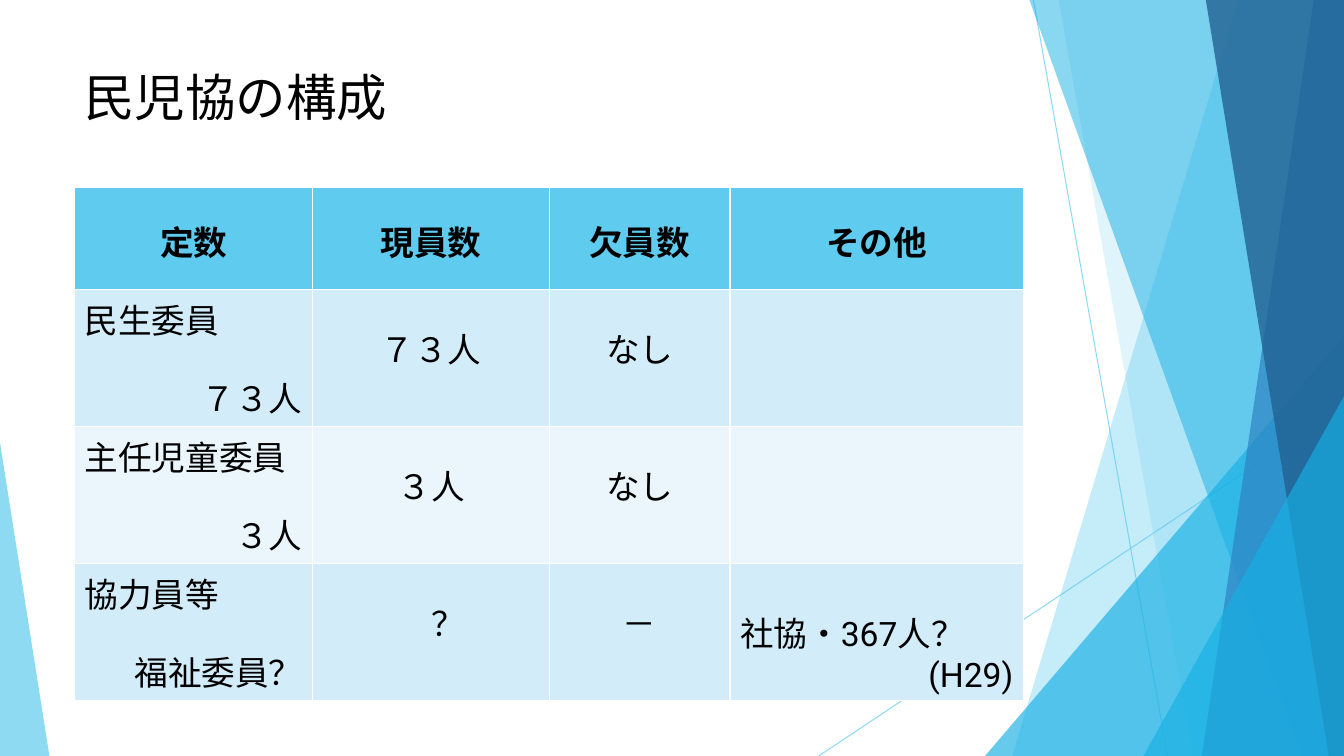
from lxml import etree
from pptx import Presentation
from pptx.dml.color import RGBColor
from pptx.enum.shapes import MSO_CONNECTOR, MSO_SHAPE
from pptx.enum.text import PP_ALIGN
from pptx.oxml.ns import qn
from pptx.util import Inches, Pt

LINE = MSO_CONNECTOR.STRAIGHT
WEDGE = MSO_SHAPE.ISOSCELES_TRIANGLE
LEFT, MID, RIGHT = PP_ALIGN.LEFT, PP_ALIGN.CENTER, PP_ALIGN.RIGHT
FONT = "Roboto"
WIDE, HIGH = 13.33, 7.5
SKY, CYAN, BLUE, NAVY = "5FCBEF", "17B0E4", "2E83C3", "226292"
BANDS = ["D2ECF9", "EAF6FC"]

RAYS = [((10.25, 0), (11.58, HIGH)), ((WIDE, 4.03), (8.12, HIGH))]
SHARDS = [
    (12.28, 10.04, SKY, 36),
    (10.5, 11.83, SKY, 20),
    ((9.77, 3.33, 3.56, 4.17), 1, CYAN, 66),
    (10.21, 12.91, CYAN, 50),
    (13.03, 11.92, BLUE, 70),
    (11.96, 13.18, NAVY, 80),
    ((11.34, 3.93, 1.99, 3.57), 1, CYAN, 66),
    ((0, 4.39, 0.49, 3.11), 0, SKY, 70),
]
COLS = [2.36, 2.35, 1.79, 2.91]
HEADS = ["定数", "現員数", "欠員数", "その他"]
ROWS = [
    ("民生委員", "７３人", "７３人", "なし", []),
    ("主任児童委員", "３人", "３人", "なし", []),
    ("協力員等", "福祉委員？", "？", "－",
     [("社協・367人？", LEFT), ("(H29)", RIGHT)]),
]


def rgb(code):
    """Turn a hex string into a colour."""
    return RGBColor.from_string(code)


def fade(fill, pct):
    """Make a solid fill partly clear."""
    tint = fill.find(".//" + qn("a:srgbClr"))
    etree.SubElement(tint, qn("a:alpha")).set("val", str(pct * 1000))


def paint(shape, code, pct):
    """Give a shape a clear fill and no edge."""
    shape.shadow.inherit = False
    shape.fill.solid()
    shape.fill.fore_color.rgb = rgb(code)
    shape.line.fill.background()
    fade(shape._element.spPr, pct)


def draw_ray(slide, start, end):
    """Draw one thin line."""
    ray = slide.shapes.add_connector(LINE, *map(Inches, start + end))
    ray.line.color.rgb = rgb(SKY)
    ray.line.width = Pt(0.75)
    fade(ray._element.spPr, 70)
    etree.SubElement(ray._element.spPr, qn("a:effectLst"))


def draw_wedge(slide, box, tip):
    """Draw a triangle with its tip at a share of its width."""
    wedge = slide.shapes.add_shape(WEDGE, *map(Inches, box))
    wedge.adjustments[0] = tip
    return wedge


def draw_pane(slide, top, foot):
    """Draw a pane from a slanted edge to the right of the slide."""
    pen = slide.shapes.build_freeform(Inches(top), 0, scale=1.0)
    ends = [(WIDE, 0), (WIDE, HIGH), (foot, HIGH)]
    pen.add_line_segments([(Inches(x), Inches(y)) for x, y in ends])
    return pen.convert_to_shape()


def add_decor(slide):
    """Draw the lines and clear shards around the slide."""
    for start, end in RAYS:
        draw_ray(slide, start, end)
    for top, foot, code, pct in SHARDS:
        draw = draw_wedge if isinstance(top, tuple) else draw_pane
        paint(draw(slide, top, foot), code, pct)


def write(frame, lines, size=24, bold=False, gap=0, space=1.0):
    """Write aligned lines into a text frame."""
    frame.word_wrap = True
    for i, (text, side) in enumerate(lines):
        para = frame.paragraphs[0] if i == 0 else frame.add_paragraph()
        para.text = text
        para.alignment = side
        para.line_spacing = space
        if i:
            para.space_before = Pt(gap)
        font = para.font
        font.name, font.size, font.bold = FONT, Pt(size), bold
        font.color.rgb = rgb("000000")


def add_title(slide, box):
    """Place the title."""
    frame = slide.shapes.add_textbox(*map(Inches, box)).text_frame
    write(frame, [("民児協の構成", LEFT)], size=36, space=0.9)


def fill_cell(cell, code, lines, top=0.05, **style):
    """Fill one cell and write its lines below a top margin."""
    cell.fill.solid()
    cell.fill.fore_color.rgb = rgb(code)
    cell.margin_top = Inches(top)
    write(cell.text_frame, lines, **style)


def add_grid(slide, box):
    """Place the table of members."""
    frame = slide.shapes.add_table(len(ROWS) + 1, len(COLS), *map(Inches, box))
    grid = frame.table
    for col, width in zip(grid.columns, COLS):
        col.width = Inches(width)
    for i, row in enumerate(grid.rows):
        row.height = Inches(1.36 if i else 1.01)
    for i, head in enumerate(HEADS):
        fill_cell(grid.cell(0, i), SKY, [(head, MID)], bold=True, space=1.5)
    for i, (role, quota, count, lack, other) in enumerate(ROWS):
        cells = grid.rows[i + 1].cells
        code = BANDS[i % 2]
        fill_cell(cells[0], code, [(role, LEFT), (quota, RIGHT)], gap=21)
        fill_cell(cells[1], code, [(count, MID)], top=0.34)
        fill_cell(cells[2], code, [(lack, MID)], top=0.34)
        fill_cell(cells[3], code, other, top=0.44)
    grid.cell(len(ROWS), 1).margin_left = Inches(0.44)


def main():
    """Build the slide and save it."""
    deck = Presentation()
    deck.slide_width, deck.slide_height = Inches(WIDE), Inches(HIGH)
    slide = deck.slides.add_slide(deck.slide_layouts[6])
    add_decor(slide)
    add_title(slide, (0.74, 0.67, 9.4, 0.91))
    add_grid(slide, (0.74, 1.86, sum(COLS), 5.09))
    deck.save("out.pptx")


if __name__ == "__main__":
    main()
